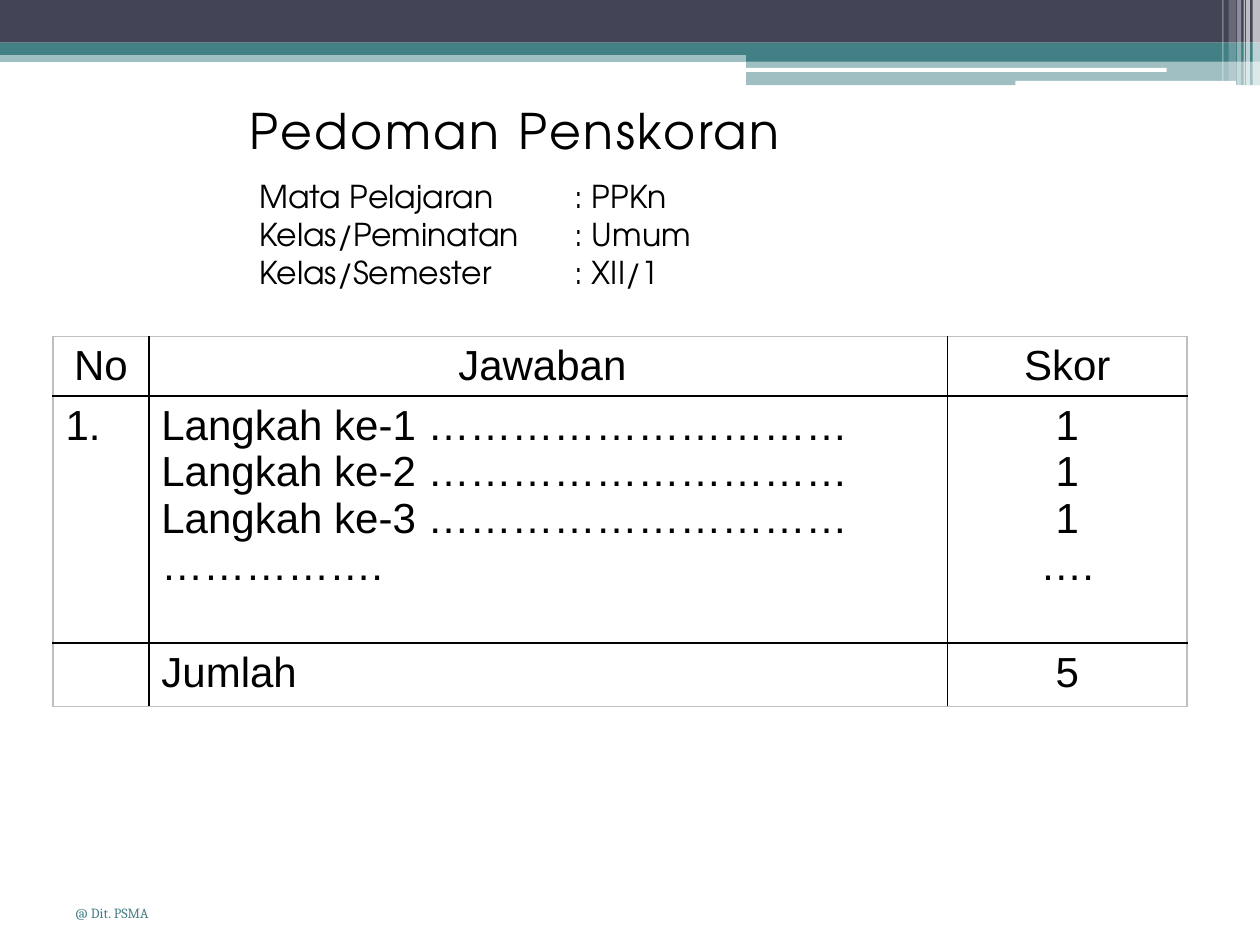
import pptx
import pptx.util
import pptx.dml.color
import pptx.enum.shapes
import pptx.enum.text
import pptx.oxml
import pptx.oxml.ns
import lxml.etree

Cm, Pt = pptx.util.Cm, pptx.util.Pt
SHAPE = pptx.enum.shapes.MSO_SHAPE
LEFT, CENTER = pptx.enum.text.PP_ALIGN.LEFT, pptx.enum.text.PP_ALIGN.CENTER

THEME = {
    "dark": "424456", "teal": "438086", "white": "FFFFFF", "ink": "000000",
    "edge": "BFBFBF",
    "heading_font": "TeX Gyre Adventor", "table_font": "Arial", "footer_font": "Cambria",
    "title": 28, "info": 18, "table": 24, "footer": 8,
}

# Content
TITLE = ["Pedoman Penskoran"]
INFO = ["Mata Pelajaran\t\t: PPKn", "Kelas/Peminatan\t: Umum", "Kelas/Semester\t\t: XII/1"]
FOOTER = ["@ Dit. PSMA"]
STEPS = [f"Langkah ke-{n} " + "…" * 10 for n in (1, 2, 3)] + ["……………."]
ROWS = [
    (["No"], ["Jawaban "], ["Skor"]),
    (["1."], STEPS, ["1", "1", "1", "…."]),
    ([], ["Jumlah"], ["5"]),
]

# Layout, in cm
PAGE_W, PAGE_H = 25.4, 19.05
SPLIT = 15.04
BARS = [  # left, top, width, height, colour, opacity
    (0, 1.02, PAGE_W, 0.23, "teal", 50),
    (0, 0, PAGE_W, 0.86, "dark", 100),
    (0, 0.86, PAGE_W, 0.25, "teal", 100),
    (SPLIT, 0.99, PAGE_W - SPLIT, 0.25, "teal", 100),
    (SPLIT, 1.22, PAGE_W - SPLIT, 0.5, "teal", 50),
]
PILLS = [(15.01, 1.37, 8.51, 0.08), (20.47, 1.63, 4.45, 0.1)]
STRIPES = [  # left, width, height, opacity
    (25.25, 0.15, 1.73, 65), (25.12, 0.08, 1.73, 65), (25.07, 0.03, 1.73, 60),
    (24.94, 0.08, 1.73, 40), (24.77, 0.15, 1.63, 20), (24.64, 0.03, 1.63, 30),
]
TABLE_LEFT, TABLE_TOP = 1.07, 6.78
COL_W = [1.93, 16.1, 4.83]
ROW_H = [1.19, 4.98, 1.19]


def rgb(name):
    return pptx.dml.color.RGBColor.from_string(THEME[name])


def add_bar(slide, kind, box, color, opacity=100):
    sp = slide.shapes.add_shape(kind, *map(Cm, box))
    sp.shadow.inherit = False
    sp.line.fill.background()
    sp.fill.solid()
    sp.fill.fore_color.rgb = rgb(color)
    if opacity < 100:
        clr = sp.fill._xPr.find(".//" + pptx.oxml.ns.qn("a:srgbClr"))
        lxml.etree.SubElement(clr, pptx.oxml.ns.qn("a:alpha"), val=str(opacity * 1000))


def write(tf, lines, font, size, color="ink", align=LEFT, spacing=0):
    tf.text = "\n".join(lines)
    for p in tf.paragraphs:
        p.alignment = align
        p.font.size = Pt(THEME[size])
        for r in p.runs:
            r.font.name = THEME[font]
            r.font.size = Pt(THEME[size])
            r.font.color.rgb = rgb(color)
            if spacing:
                r.font._element.set("spc", str(spacing))


def add_text(slide, box, *args, **kwargs):
    tf = slide.shapes.add_textbox(*map(Cm, box)).text_frame
    tf.word_wrap = True
    write(tf, *args, **kwargs)


def set_borders(cell, colors):
    tc_pr = cell._tc.get_or_add_tcPr()
    for i, (side, color) in enumerate(colors.items()):
        tc_pr.insert(i, pptx.oxml.parse_xml(
            f'<a:{side} {pptx.oxml.ns.nsdecls("a")} w="12700"><a:solidFill>'
            f'<a:srgbClr val="{THEME[color]}"/></a:solidFill></a:{side}>'))


def add_score_table(slide):
    box = (TABLE_LEFT, TABLE_TOP, sum(COL_W), sum(ROW_H))
    table = slide.shapes.add_table(len(ROWS), len(COL_W), *map(Cm, box)).table
    for col, w in zip(table.columns, COL_W):
        col.width = Cm(w)
    for row, h in zip(table.rows, ROW_H):
        row.height = Cm(h)
    last_row, last_col = len(ROWS) - 1, len(COL_W) - 1
    for i, row in enumerate(ROWS):
        for j, lines in enumerate(row):
            cell = table.cell(i, j)
            cell.fill.background()
            align = CENTER if i == 0 or j == last_col else LEFT
            write(cell.text_frame, lines, "table_font", "table", align=align)
            outer = {"lnL": j == 0, "lnR": j == last_col, "lnT": i == 0, "lnB": i == last_row}
            set_borders(cell, {s: "edge" if o else "ink" for s, o in outer.items()})


def main():
    prs = pptx.Presentation()
    prs.slide_width, prs.slide_height = Cm(PAGE_W), Cm(PAGE_H)
    slide = prs.slides.add_slide(prs.slide_layouts[6])

    # Header band
    for *box, color, opacity in BARS:
        add_bar(slide, SHAPE.RECTANGLE, box, color, opacity)
    for box in PILLS:
        add_bar(slide, SHAPE.ROUNDED_RECTANGLE, box, "white")
    for left, w, h, opacity in STRIPES:
        add_bar(slide, SHAPE.RECTANGLE, (left, 0, w, h), "white", opacity)

    # Scoring table
    add_score_table(slide)

    # Title, subject details and footer
    add_text(slide, (4.78, 1.9, 11.68, 1.45), TITLE, "heading_font", "title", spacing=150)
    add_text(slide, (1.27, 18.11, 3.84, 1.02), FOOTER, "footer_font", "footer", "teal")
    add_text(slide, (4.98, 3.45, 11.28, 2.57), INFO, "heading_font", "info")

    prs.save("out.pptx")


if __name__ == "__main__":
    main()
